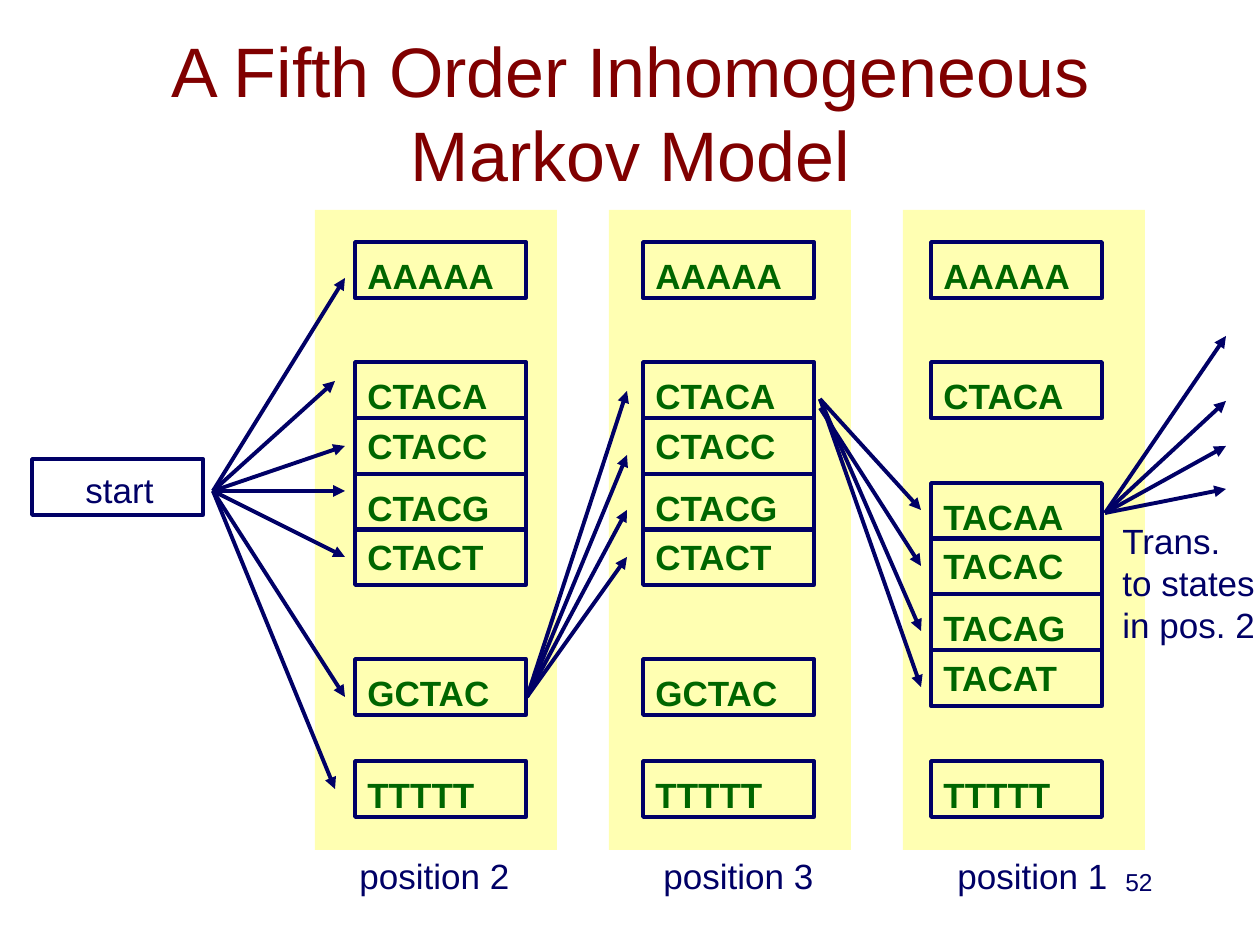
from lxml import etree
from pptx import Presentation
from pptx.dml.color import RGBColor
from pptx.enum.shapes import MSO_CONNECTOR, MSO_SHAPE
from pptx.enum.text import MSO_ANCHOR, PP_ALIGN
from pptx.oxml.ns import qn
from pptx.util import Pt

RECT = MSO_SHAPE.RECTANGLE
LINE = MSO_CONNECTOR.STRAIGHT
LEFT, MID, RIGHT = PP_ALIGN.LEFT, PP_ALIGN.CENTER, PP_ALIGN.RIGHT
TOP, CENTER = MSO_ANCHOR.TOP, MSO_ANCHOR.MIDDLE
NAVY, GREEN, MAROON, YELLOW = "000066", "006600", "800000", "FFFF00"
SCALE = 914400 / 126


def emu(*nums):
    return [round(num * SCALE) for num in nums]


def write(home, text, *spot, size=20, color=NAVY, bold=False,
          align=LEFT, anchor=TOP, wrap=False):
    frame = home.add_textbox(*emu(*spot)).text_frame
    frame.word_wrap = wrap
    frame.vertical_anchor = anchor
    frame.text = text
    for para in frame.paragraphs:
        para.alignment = align
        font = para.runs[0].font
        font.name, font.size, font.bold = "Arial", Pt(size), bold
        font.color.rgb = RGBColor.from_string(color)


deck = Presentation()
deck.slide_width, deck.slide_height = emu(1260, 945)
shapes = deck.slides.add_slide(deck.slide_layouts[6]).shapes

for col in range(3):
    band = shapes.add_shape(RECT, *emu(315 + 294 * col, 210, 242, 640))
    band.shadow.inherit = False
    band.fill.solid()
    band.fill.fore_color.rgb = RGBColor.from_string(YELLOW)
    band.line.fill.background()
    tint = band.fill._xPr.find(qn("a:solidFill"))[0]
    etree.SubElement(tint, qn("a:alpha"), val="30000")

write(shapes, "A Fifth Order Inhomogeneous Markov Model", 95, 32, 1071, 158,
      size=40, color=MAROON, align=MID, anchor=CENTER, wrap=True)

early = [("AAAAA", 242, 6), ("CTACA", 362, 6), ("CTACC", 418, 0),
         ("CTACG", 474, 6), ("CTACT", 529, 0), ("GCTAC", 659, 6),
         ("TTTTT", 761, 6)]
late = [("AAAAA", 242, 6), ("CTACA", 362, 6), ("TACAA", 483, 6),
        ("TACAC", 538, 0), ("TACAG", 594, 6), ("TACAT", 650, 0),
        ("TTTTT", 761, 6)]
boxes = [(shapes, 32, 459)]
for col, states in enumerate([early, early, late]):
    group = shapes.add_group_shape().shapes
    left = 355 + 288 * col
    for name, top, drop in states:
        write(group, name, left, top + drop, 171, 54,
              color=GREEN, bold=True, wrap=True)
        boxes.append((group, left, top))

for home, left, top in boxes:
    box = home.add_shape(RECT, *emu(left, top, 171, 56))
    box.shadow.inherit = False
    box.fill.background()
    box.line.color.rgb = RGBColor.from_string(NAVY)
    box.line.width = Pt(2)

fans = [
    ((213, 491), [(345, 278), (345, 697), (345, 557), (345, 491),
                  (345, 446), (335, 381), (335, 789)]),
    ((527, 697), [(627, 391), (627, 455), (627, 510), (627, 557)]),
    ((820, 399), [(921, 510), (921, 631), (921, 687)]),
    ((820, 408), [(921, 566)]),
    ((1105, 513), [(1226, 336), (1226, 489), (1226, 446), (1226, 401)]),
]
for start, ends in fans:
    for end in ends:
        arrow = shapes.add_connector(LINE, *emu(*start, *end))
        arrow.line.color.rgb = RGBColor.from_string(NAVY)
        arrow.line.width = Pt(2.25)
        etree.SubElement(arrow.line._get_or_add_ln(), qn("a:tailEnd"),
                         type="triangle")
        etree.SubElement(arrow._element.spPr, qn("a:effectLst"))

write(shapes, "start", 73, 462, 93, 54)
for left, num in [(347, 2), (651, 3), (945, 1)]:
    write(shapes, f"position {num}", left, 848, 175, 54)
write(shapes, "Trans.\nto states\nin pos. 2", 1110, 513, 159, 140)
write(shapes, "52", 903, 861, 262, 63, size=14, align=RIGHT, wrap=True)

deck.save("out.pptx")
